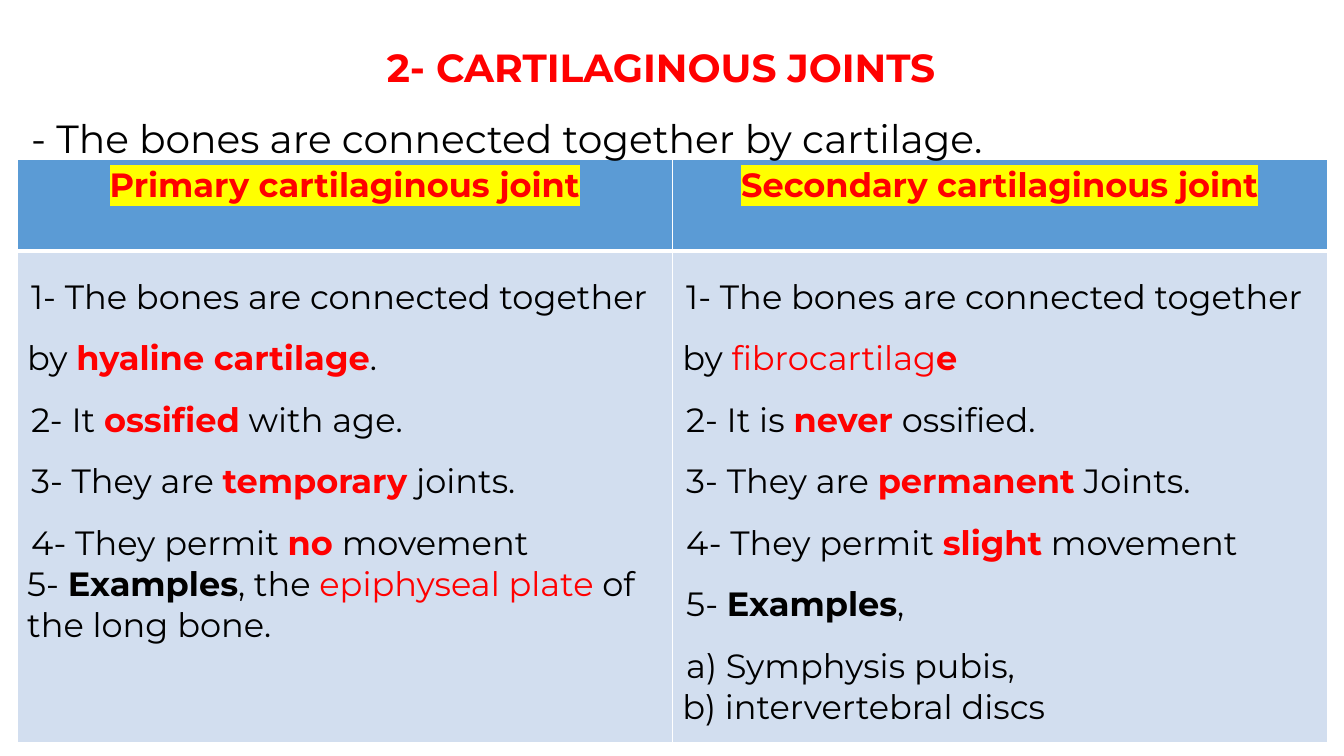
from lxml.etree import SubElement as Sub
from pptx import Presentation
from pptx.dml.color import RGBColor as Rgb
from pptx.enum.text import MSO_ANCHOR as Anchor, MSO_AUTO_SIZE as Fit, PP_ALIGN as Align
from pptx.oxml import parse_xml
from pptx.oxml.ns import nsdecls, qn
from pptx.util import Cm, Pt

RED, BLACK, WHITE, YELLOW = "FF0000", "000000", "FFFFFF", "FFFF00"
BLUE, PALE = "5B9BD5", "D2DEEF"

PLAIN = {"bold": False, "color": BLACK}
STRONG = {"bold": True, "color": BLACK}
TINT = {"bold": False, "color": RED}
KEY = {"bold": True, "color": RED}
MARK = {"bold": True, "color": RED, "mark": YELLOW}

LOOSE = {"line_spacing": 1.5, "space_before": Pt(0)}
TIGHT = {"line_spacing": 1.0, "space_before": Pt(0)}
MID = {"alignment": Align.CENTER}
JUST = {"alignment": Align.JUSTIFY}

HEADS = ["Primary cartilaginous joint", "Secondary cartilaginous joint"]
FIRST = [
    (LOOSE, [("1- The bones are connected together by ", PLAIN),
             ("hyaline cartilage", KEY), (".", PLAIN)]),
    (LOOSE, [("2- It ", PLAIN), ("ossified", KEY), (" with age.", PLAIN)]),
    (LOOSE, [("3- They are ", PLAIN), ("temporary", KEY), (" joints.", PLAIN)]),
    (LOOSE, [("4- They permit ", PLAIN), ("no", KEY), (" movement", PLAIN)]),
    (TIGHT, [("5- ", PLAIN), ("Examples", STRONG), (", the ", PLAIN),
             ("epiphyseal plate ", TINT), ("of the long bone.", PLAIN)]),
]
SECOND = [
    (LOOSE, [("1- The bones are connected together by ", PLAIN),
             ("fibrocartilag", TINT), ("e", KEY)]),
    (LOOSE, [("2- It is ", PLAIN), ("never", KEY), (" ossified.", PLAIN)]),
    (LOOSE, [("3- They are ", PLAIN), ("permanent", KEY), (" Joints.", PLAIN)]),
    (LOOSE, [("4- They permit ", PLAIN), ("slight", KEY), (" movement", PLAIN)]),
    (LOOSE | JUST, [("5- ", PLAIN), ("Examples", STRONG), (",", PLAIN)]),
    (LOOSE | JUST, [("a) Symphysis pubis,", PLAIN)]),
    (TIGHT, [("b) intervertebral discs", PLAIN)]),
]


def paint(target, color):
    """Give a fill or a font the hex colour."""
    if hasattr(target, "solid"):
        target.solid()
        target.fore_color.rgb = Rgb.from_string(color)
    else:
        target.color.rgb = Rgb.from_string(color)


def apply(target, values):
    for name, value in values.items():
        setattr(target, name, value)


def add_run(para, text, style, size):
    run = para.add_run()
    run.text = text
    apply(run.font, {"name": "Montserrat", "size": Pt(size), "bold": style["bold"]})
    paint(run.font, style["color"])
    if "mark" in style:
        mark = parse_xml(f'<a:highlight {nsdecls("a")}><a:srgbClr val="{style["mark"]}"/></a:highlight>')
        run.font._element.find(qn("a:latin")).addprevious(mark)


def write(frame, lines, size):
    """Fill a text frame with (paragraph format, runs) lines, without bullets."""
    for i, (layout, runs) in enumerate(lines):
        para = frame.add_paragraph() if i else frame.paragraphs[0]
        apply(para, layout)
        props = para._p.get_or_add_pPr()
        props.set("marL", "0")
        props.set("indent", str(Cm(0.1) if layout["line_spacing"] > 1 else 0))
        Sub(props, qn("a:buNone"))
        for text, style in runs:
            add_run(para, text, style, size)


def add_line(holder, line, left, top, width, height):
    """Place one heading line in a placeholder."""
    apply(holder, {"left": left, "top": top, "width": width, "height": height})
    frame = holder.text_frame
    apply(frame, {"word_wrap": True, "auto_size": Fit.NONE, "vertical_anchor": Anchor.TOP})
    write(frame, [line], 28)


def edge(cell, base):
    """Draw white cell borders, the bottom one base points wide."""
    props = cell._tc.get_or_add_tcPr()
    for i, (side, width) in enumerate({"L": 1, "R": 1, "T": 1, "B": base}.items()):
        props.insert(i, parse_xml(
            f'<a:ln{side} {nsdecls("a")} w="{Pt(width)}"><a:solidFill>'
            f'<a:srgbClr val="{WHITE}"/></a:solidFill></a:ln{side}>'))


def add_grid(slide, left, top, width, height):
    heads = [[(TIGHT | MID, [(head, MARK)])] for head in HEADS]
    rows = [(heads, BLUE, 3), ([FIRST, SECOND], PALE, 1)]
    shape = slide.shapes.add_table(len(rows), len(HEADS), left, top, width, height)
    table = shape.table
    table.rows[0].height = Cm(2.31)
    table.rows[1].height = height - Cm(2.31)
    for r, (texts, color, base) in enumerate(rows):
        for c, lines in enumerate(texts):
            cell = table.cell(r, c)
            paint(cell.fill, color)
            edge(cell, base)
            write(cell.text_frame, lines, 24)
    return shape


def joint_slide(deck):
    slide = deck.slides.add_slide(deck.slide_layouts[1])
    title, body = slide.placeholders
    left, top, width, step = Cm(0.43), Cm(0.36), Cm(32.36), Cm(1.81)
    add_line(title, (LOOSE | MID, [("2- CARTILAGINOUS JOINTS", KEY)]), left, top, width, step)
    add_line(body, (LOOSE, [("- The bones are connected together by cartilage.", PLAIN)]),
             left, top + step, width, step)
    grid = add_grid(slide, left, Cm(4.02), Cm(33.02), Cm(14.7))
    title._element.addprevious(grid._element)


def main():
    deck = Presentation()
    apply(deck, {"slide_width": Cm(33.87), "slide_height": Cm(19.05)})
    joint_slide(deck)
    deck.save("out.pptx")


if __name__ == "__main__":
    main()
